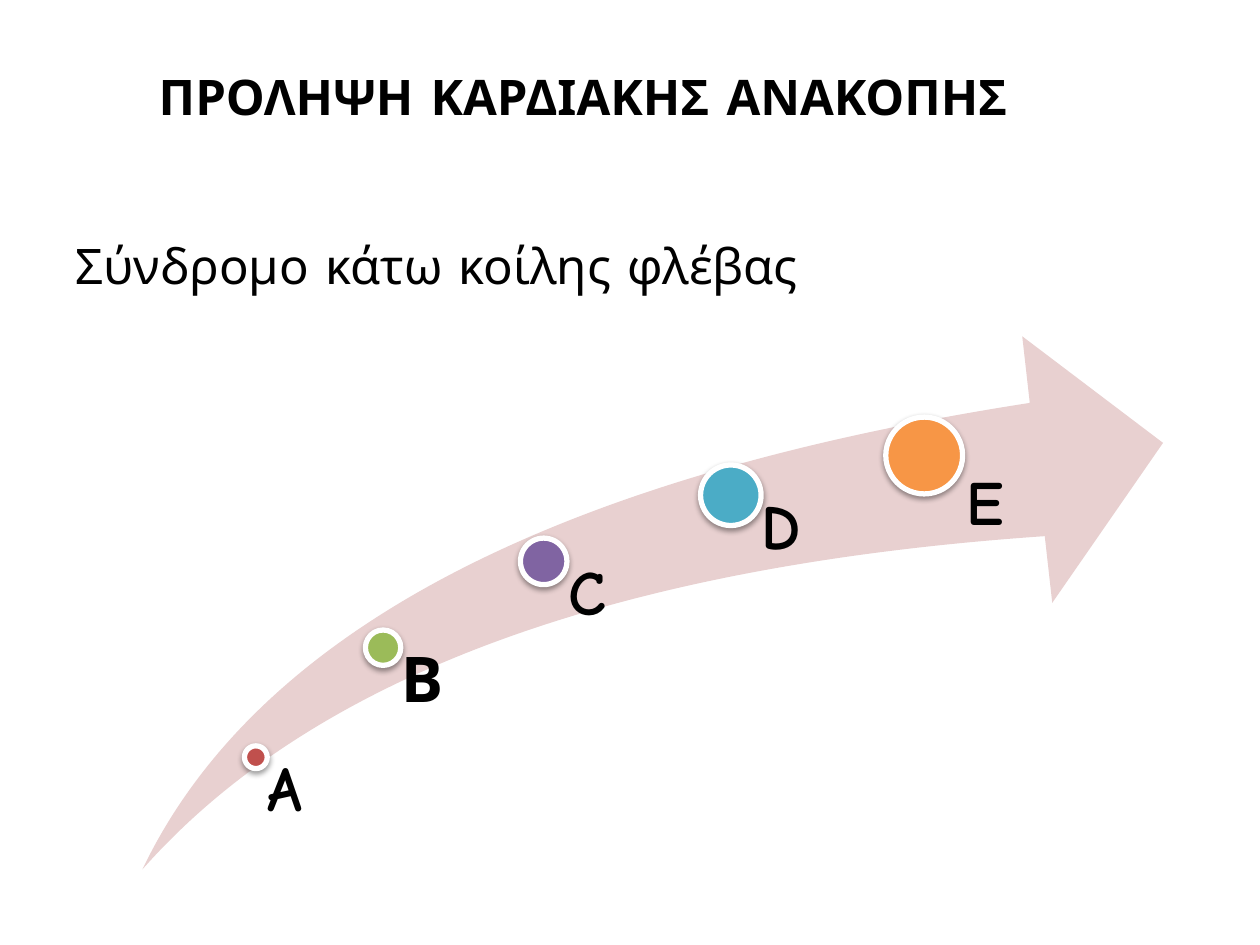
"""Build the slide on preventing cardiac arrest, with five steps along a rising arrow."""
from lxml.etree import SubElement
from pptx import Presentation
from pptx.dml.color import RGBColor
from pptx.enum.shapes import MSO_SHAPE
from pptx.enum.text import MSO_ANCHOR, PP_ALIGN
from pptx.oxml.ns import qn
from pptx.util import Pt


def paint(target, color):
    target.solid()
    target.fore_color.rgb = RGBColor.from_string(color)


def style(paragraph, size, bold):
    paragraph.alignment = PP_ALIGN.LEFT
    paragraph.font.name = "Comic Neue"
    paragraph.font.size = Pt(size)
    paragraph.font.bold = bold
    paint(paragraph.font.fill, "000000")


presentation = Presentation()
presentation.slide_width, presentation.slide_height = Pt(720), Pt(540)
slide = presentation.slides.add_slide(presentation.slide_layouts[5])

title = slide.shapes.title
title.left, title.top, title.width, title.height = Pt(36), Pt(21.6), Pt(648), Pt(163.4)
title.text_frame.vertical_anchor = MSO_ANCHOR.MIDDLE
title.text_frame.text = "ΠΡΟΛΗΨΗ ΚΑΡΔΙΑΚΗΣ ΑΝΑΚΟΠΗΣ\nΣύνδρομο κάτω κοίλης φλέβας"
heading, syndrome = title.text_frame.paragraphs
style(heading, 28, True)
style(syndrome, 28, False)
heading._p.get_or_add_pPr().set("indent", str(Pt(47.5)))
syndrome.space_before = Pt(63)

arrow = slide.shapes.add_shape(MSO_SHAPE.SWOOSH_ARROW, Pt(81.4), Pt(192.2), Pt(583.2), Pt(304.6))
arrow.adjustments[0] = arrow.adjustments[1] = 0.25
arrow.shadow.inherit = False
paint(arrow.fill, "E8D0D0")
arrow.line.fill.background()

steps = [
    ("A", "C0504D", 146.2, 432.7, 13, (146.2, 432.7, 72.7, 82.1), 6.5, 0.9),
    ("Β", "9BBB59", 218.9, 370.1, 20.2, (218.2, 370.1, 92.2, 144.7), 10.8, 0.9),
    ("C", "8064A2", 310.7, 320.8, 26.6, (310.3, 320.4, 106.6, 194.4), 14.4, 0.9),
    ("D", "4BACC6", 417.6, 283, 34.6, (416.9, 283, 110.9, 231.8), 18, 0.9),
    ("E", "F79646", 528.1, 260.3, 43.9, (504.7, 264.2, 110.9, 254.9), 47.5, 1),
]
for letter, color, center_x, center_y, diameter, label_box, inset, spacing in steps:
    dot = slide.shapes.add_shape(
        MSO_SHAPE.OVAL,
        Pt(center_x - diameter / 2), Pt(center_y - diameter / 2), Pt(diameter), Pt(diameter),
    )
    paint(dot.fill, color)
    paint(dot.line.fill, "FFFFFF")
    dot.line.width = Pt(3)
    dot.shadow.inherit = False
    effects = dot._element.spPr.find(qn("a:effectLst"))
    shadow = SubElement(
        effects, qn("a:outerShdw"),
        blurRad=str(Pt(3.1)), dist=str(Pt(1.6)), dir="5400000", rotWithShape="0",
    )
    black = SubElement(shadow, qn("a:srgbClr"), val="000000")
    SubElement(black, qn("a:alpha"), val="38000")

    label = slide.shapes.add_textbox(*map(Pt, label_box)).text_frame
    label.word_wrap = True
    label.vertical_anchor = MSO_ANCHOR.TOP
    label.margin_left = Pt(inset)
    label.margin_top = label.margin_right = label.margin_bottom = 0
    label.text = letter
    style(label.paragraphs[0], 36, True)
    label.paragraphs[0].line_spacing = spacing

presentation.save("out.pptx")
